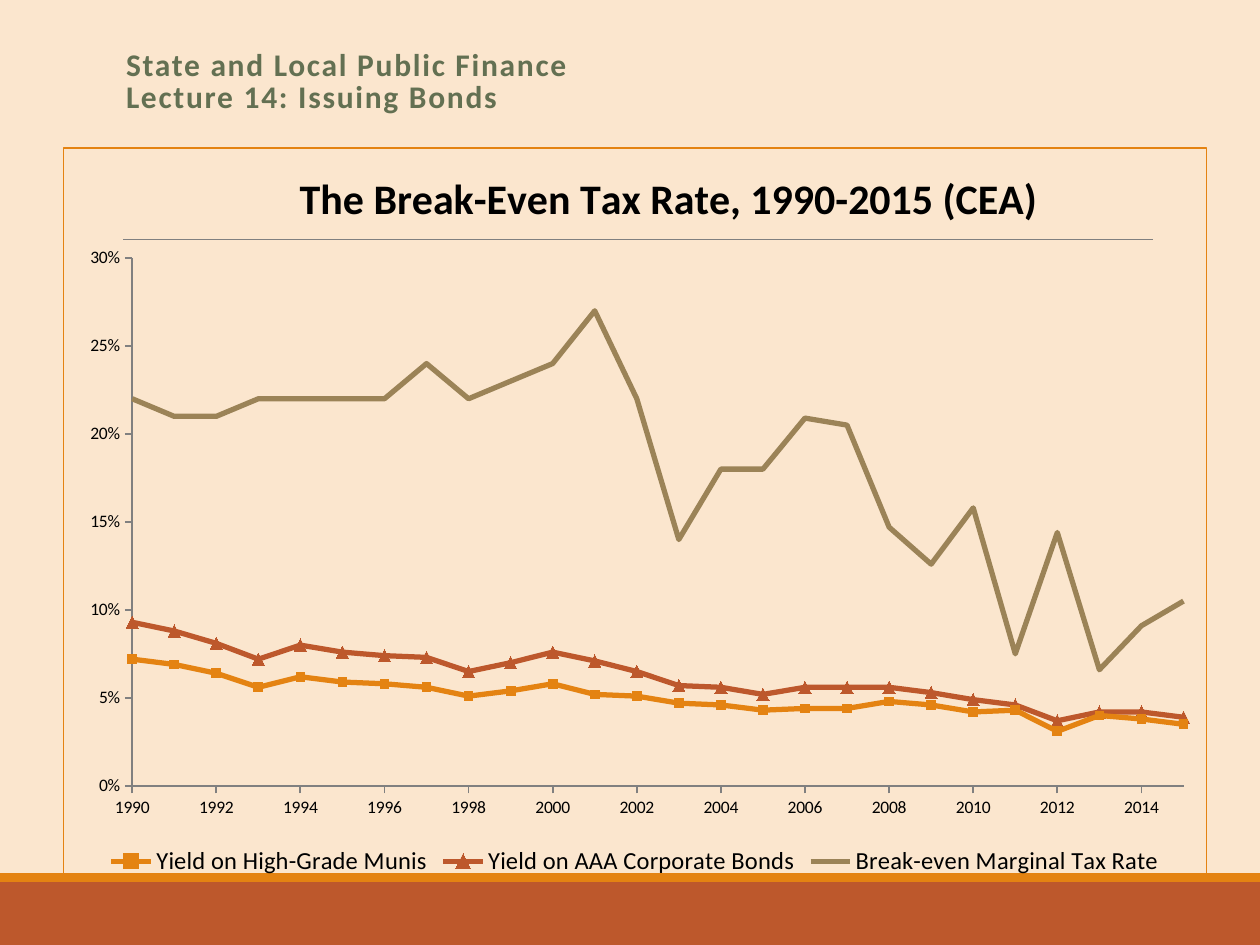
from dataclasses import dataclass
from typing import Optional

import lxml.etree
import pptx
import pptx.chart.data
import pptx.dml.color
import pptx.enum.chart
import pptx.enum.shapes
import pptx.enum.text
import pptx.oxml
import pptx.oxml.ns
import pptx.util

Inches = pptx.util.Inches
Pt = pptx.util.Pt
MarkerStyle = pptx.enum.chart.XL_MARKER_STYLE


@dataclass(frozen=True)
class Theme:
    font: str = "Calibri"
    background: str = "FBE6CE"
    heading: str = "637052"
    text: str = "000000"
    rule: str = "808080"
    orange: str = "E48312"
    rust: str = "BD582C"
    olive: str = "9B8357"
    heading_size: int = 18
    chart_title_size: int = 24
    legend_size: int = 14
    axis_size: int = 10


@dataclass(frozen=True)
class Band:
    top: float
    height: float
    color: str


@dataclass(frozen=True)
class YieldSeries:
    name: str
    color: str
    marker: MarkerStyle
    marker_size: Optional[int]
    percents: tuple[float, ...]


THEME = Theme()
FIRST_YEAR, LAST_YEAR = 1990, 2015
BANDS = (Band(7, 0.5, THEME.rust), Band(6.93, 0.07, THEME.orange))
SERIES = (
    YieldSeries("Yield on High-Grade Munis", THEME.orange, MarkerStyle.SQUARE, 5, (
        7.2, 6.9, 6.4, 5.6, 6.2, 5.9, 5.8, 5.6, 5.1, 5.4, 5.8, 5.2, 5.1,
        4.7, 4.6, 4.3, 4.4, 4.4, 4.8, 4.6, 4.2, 4.3, 3.1, 4.0, 3.8, 3.5)),
    YieldSeries("Yield on AAA Corporate Bonds", THEME.rust, MarkerStyle.TRIANGLE, 7, (
        9.3, 8.8, 8.1, 7.2, 8.0, 7.6, 7.4, 7.3, 6.5, 7.0, 7.6, 7.1, 6.5,
        5.7, 5.6, 5.2, 5.6, 5.6, 5.6, 5.3, 4.9, 4.6, 3.7, 4.2, 4.2, 3.9)),
    YieldSeries("Break-even Marginal Tax Rate", THEME.olive, MarkerStyle.NONE, None, (
        22, 21, 21, 22, 22, 22, 22, 24, 22, 23, 24, 27, 22,
        14, 18, 18, 20.9, 20.5, 14.7, 12.6, 15.8, 7.5, 14.4, 6.6, 9.1, 10.5)),
)


def rgb(color: str) -> pptx.dml.color.RGBColor:
    return pptx.dml.color.RGBColor.from_string(color)


def style_font(font, size: int, color: str, bold: bool = False) -> None:
    font.name = THEME.font
    font.size = Pt(size)
    font.bold = bold
    font.color.rgb = rgb(color)


def style_line(line, color: str, width: float) -> None:
    line.color.rgb = rgb(color)
    line.width = Pt(width)


def add_band(slide, band: Band) -> None:
    shape = slide.shapes.add_shape(
        pptx.enum.shapes.MSO_SHAPE.RECTANGLE,
        0, Inches(band.top), Inches(10), Inches(band.height))
    shape.shadow.inherit = False
    shape.fill.solid()
    shape.fill.fore_color.rgb = rgb(band.color)
    shape.line.fill.background()


def add_rule(slide) -> None:
    rule = slide.shapes.add_connector(
        pptx.enum.shapes.MSO_CONNECTOR.STRAIGHT,
        Inches(0.98), Inches(1.9), Inches(9.15), Inches(1.9))
    style_line(rule.line, THEME.rule, 0.5)
    lxml.etree.SubElement(rule._element.spPr, pptx.oxml.ns.qn("a:effectLst"))


def format_heading(title) -> None:
    title.left, title.top = Inches(0.9), Inches(0.33)
    title.width, title.height = Inches(8.25), Inches(0.65)
    frame = title.text_frame
    frame.word_wrap = True
    frame.auto_size = pptx.enum.text.MSO_AUTO_SIZE.NONE
    frame.vertical_anchor = pptx.enum.text.MSO_ANCHOR.MIDDLE
    paragraph = frame.paragraphs[0]
    paragraph.text = "State and Local Public Finance\nLecture 14: Issuing Bonds"
    paragraph.alignment = pptx.enum.text.PP_ALIGN.LEFT
    paragraph.line_spacing = 0.85
    style_font(paragraph.font, THEME.heading_size, THEME.heading, bold=True)
    for run in paragraph.runs:
        run._r.get_or_add_rPr().set("spc", "100")


def place(parent, **fractions: float) -> None:
    for layout in parent.findall(pptx.oxml.ns.qn("c:layout")):
        parent.remove(layout)
    inner = '<c:layoutTarget val="inner"/>' if "w" in fractions else ""
    modes = "".join(f'<c:{key}Mode val="edge"/>' for key in ("x", "y"))
    values = "".join(f'<c:{key} val="{value}"/>' for key, value in fractions.items())
    layout = pptx.oxml.parse_xml(
        f'<c:layout {pptx.oxml.ns.nsdecls("c")}><c:manualLayout>'
        f"{inner}{modes}{values}</c:manualLayout></c:layout>")
    text = parent.find(pptx.oxml.ns.qn("c:tx"))
    parent.insert(0 if text is None else 1, layout)


def format_axis(axis, low: float, high: float, step: float, number_format: str) -> None:
    axis.minimum_scale, axis.maximum_scale, axis.major_unit = low, high, step
    axis.has_major_gridlines = False
    axis.major_tick_mark = pptx.enum.chart.XL_TICK_MARK.OUTSIDE
    axis.tick_labels.number_format = number_format
    axis.tick_labels.number_format_is_linked = False
    style_line(axis.format.line, THEME.rule, 1)


def format_series(plotted, series: YieldSeries) -> None:
    plotted.smooth = False
    style_line(plotted.format.line, series.color, 3)
    plotted.marker.style = series.marker
    if series.marker_size:
        plotted.marker.size = series.marker_size
        plotted.marker.format.fill.solid()
        plotted.marker.format.fill.fore_color.rgb = rgb(series.color)
        plotted.marker.format.line.fill.background()


def add_yield_chart(slide) -> None:
    data = pptx.chart.data.XyChartData(number_format="0%")
    for series in SERIES:
        points = data.add_series(series.name)
        for year, percent in enumerate(series.percents, FIRST_YEAR):
            points.add_data_point(year, round(percent / 100, 3))
    chart = slide.shapes.add_chart(
        pptx.enum.chart.XL_CHART_TYPE.XY_SCATTER_LINES,
        Inches(0.5), Inches(1.17), Inches(9.08), Inches(5.83), data).chart
    style_font(chart.font, THEME.axis_size, THEME.text)

    chart.has_title = True
    paragraph = chart.chart_title.text_frame.paragraphs[0]
    paragraph.text = "The Break-Even Tax Rate, 1990-2015 (CEA)"
    style_font(paragraph.font, THEME.chart_title_size, THEME.text, bold=True)
    place(chart.chart_title._element, x=0.2, y=0.02)
    place(chart._chartSpace.chart.plotArea, x=0.06, y=0.15, w=0.92, h=0.72)

    chart.has_legend = True
    chart.legend.position = pptx.enum.chart.XL_LEGEND_POSITION.BOTTOM
    chart.legend.include_in_layout = False
    style_font(chart.legend.font, THEME.legend_size, THEME.text)

    format_axis(chart.category_axis, FIRST_YEAR, LAST_YEAR, 2, "General")
    format_axis(chart.value_axis, 0, 0.3, 0.05, "0%")
    plot = chart.plots[0]
    plot.vary_by_categories = False
    for plotted, series in zip(plot.series, SERIES):
        format_series(plotted, series)

    border = pptx.oxml.parse_xml(
        f'<c:spPr {pptx.oxml.ns.nsdecls("c", "a")}><a:noFill/>'
        f'<a:ln w="{Pt(0.75)}"><a:solidFill><a:srgbClr val="{THEME.orange}"/>'
        "</a:solidFill></a:ln></c:spPr>")
    chart._chartSpace.chart.addnext(border)


def main() -> None:
    presentation = pptx.Presentation()
    presentation.slide_width, presentation.slide_height = Inches(10), Inches(7.5)
    slide = presentation.slides.add_slide(presentation.slide_layouts[5])
    slide.background.fill.solid()
    slide.background.fill.fore_color.rgb = rgb(THEME.background)
    for band in BANDS:
        add_band(slide, band)
    add_rule(slide)
    format_heading(slide.shapes.title)
    add_yield_chart(slide)
    presentation.save("out.pptx")


if __name__ == "__main__":
    main()
